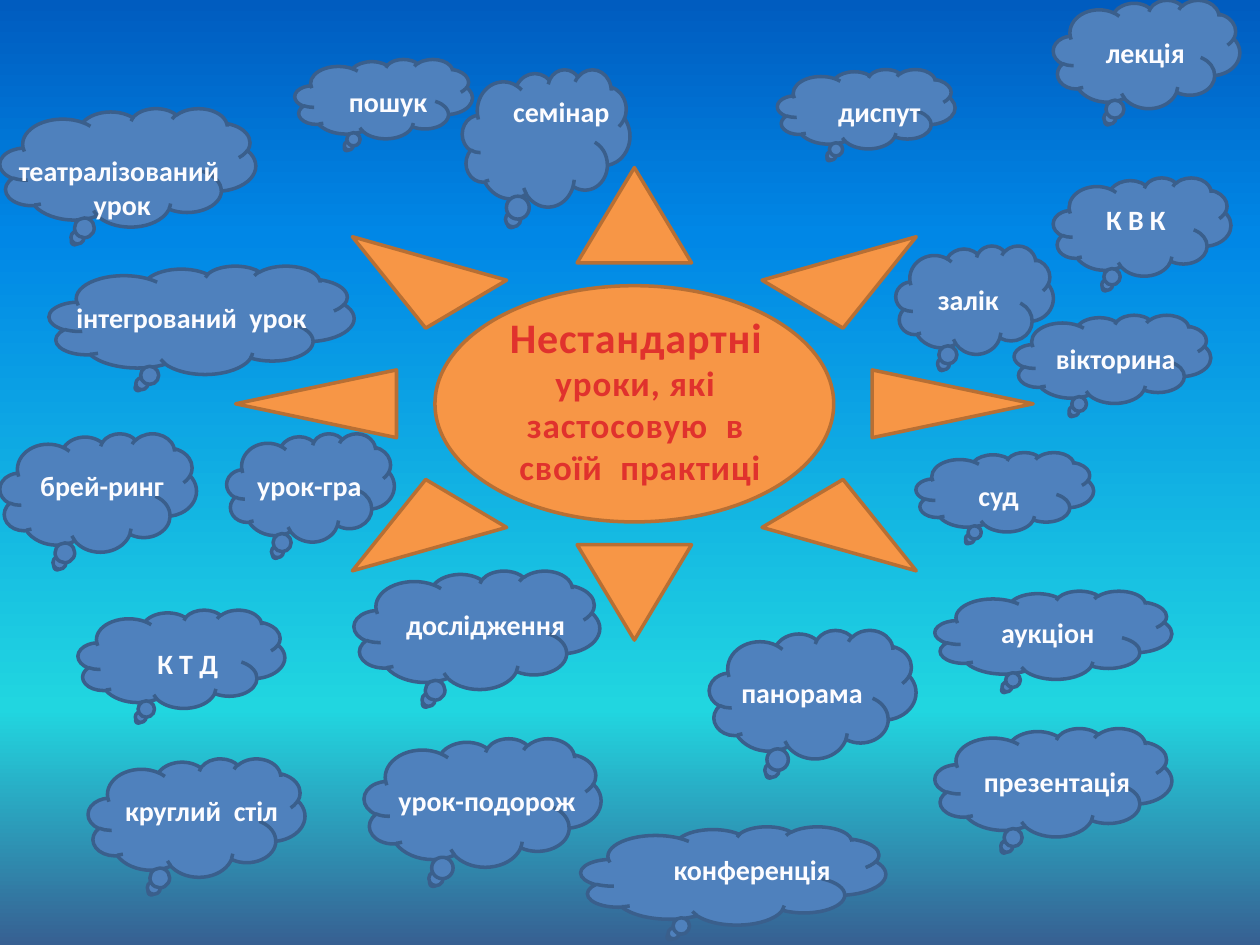
from lxml import etree
from pptx import Presentation
from pptx.dml.color import RGBColor
from pptx.enum.shapes import MSO_SHAPE
from pptx.enum.text import MSO_AUTO_SIZE, PP_ALIGN
from pptx.oxml.ns import qn
from pptx.util import Inches, Pt

SUN = MSO_SHAPE.SUN
CLOUD = MSO_SHAPE.CLOUD_CALLOUT
CENTER = PP_ALIGN.CENTER
GROW = MSO_AUTO_SIZE.SHAPE_TO_FIT_TEXT

COLORS = {
    "sun": "F79646", "sun_edge": "B76F34",
    "cloud": "4F81BD", "cloud_edge": "3A5F8C",
    "label": "FCFCFF", "label_edge": "1E7CEE",
    "title_light": "E0322D", "title_dark": "A2201C",
    "horizon": "376092", "turquoise": "21D6E0",
    "sky": "0087E6", "zenith": "005CBF",
}

TITLE = [
    ("Нестандартні", 24),
    ("  ", 16),
    ("уроки, які  застосовую  в  своїй  практиці", 20),
]

LESSONS = [
    ("лекція", (8.36, 0, 1.48, 0.86), (8.62, 0.23, 0.94, 0.37)),
    ("панорама", (5.63, 5, 1.64, 1.02), (5.72, 5.31, 1.29, 0.37)),
    ("диспут", (6.17, 0.55, 1.41, 0.63), (6.5, 0.7, 0.96, 0.37)),
    ("пошук", (2.34, 0.47, 1.41, 0.63), (2.62, 0.62, 0.92, 0.37)),
    ("вікторина", (8.05, 2.5, 1.56, 0.7), (8.19, 2.66, 1.33, 0.37)),
    ("суд", (7.27, 3.59, 1.41, 0.63), (7.65, 3.75, 0.55, 0.37)),
    ("залік", (7.11, 1.95, 1.25, 0.86), (7.3, 2.19, 0.77, 0.37)),
    ("дослідження", (2.81, 4.53, 1.95, 0.94), (3.04, 4.77, 1.63, 0.37)),
    ("урок-гра", (1.8, 3.44, 1.33, 0.86), (1.87, 3.67, 1.17, 0.37)),
    ("інтегрований  урок", (0.39, 2.11, 2.42, 0.86), (0.34, 2.34, 2.36, 0.37)),
    ("театралізований  урок", (0, 0.86, 2.03, 0.94), (-0.06, 1.17, 2.06, 0.64)),
    ("К Т Д ", (0.62, 4.84, 1.64, 0.78), (1.11, 5.08, 0.81, 0.37)),
    ("аукціон", (7.42, 4.69, 1.88, 0.7), (7.78, 4.84, 1.07, 0.37)),
    ("урок-подорож", (2.89, 5.86, 1.88, 1.02), (2.97, 6.17, 1.79, 0.37)),
    ("презентація", (7.42, 5.78, 1.88, 0.86), (7.61, 6.02, 1.56, 0.37)),
    ("круглий  стіл", (0.7, 6.02, 1.72, 0.94), (0.78, 6.25, 1.64, 0.37)),
    ("конференція", (4.61, 6.56, 2.42, 0.78), (5.14, 6.72, 1.66, 0.37)),
    ("брей-ринг", (0, 3.44, 1.56, 0.94), (0.13, 3.67, 1.36, 0.37)),
    ("К В К", (8.36, 1.41, 1.41, 0.78), (8.62, 1.56, 0.79, 0.37)),
    ("семінар", (3.67, 0.55, 1.33, 1.09), (3.83, 0.7, 1.25, 0.37)),
]
WRAPPED = {"семінар", "театралізований  урок"}


def add_solid(parent, color):
    fill = etree.SubElement(parent, qn("a:solidFill"))
    return etree.SubElement(fill, qn("a:srgbClr"), val=COLORS[color])


class LessonSlide:
    font = "Calibri"
    label_size = 16

    def __init__(self, slide):
        self.slide = slide

    def gradient(self, fill, owner, stops, angle):
        fill.gradient()
        fill.gradient_angle = angle
        stop_list = next(owner.iter(qn("a:gsLst")))
        for stop in list(stop_list):
            stop_list.remove(stop)
        for position, color in stops:
            stop = etree.SubElement(stop_list, qn("a:gs"), pos=str(position * 1000))
            etree.SubElement(stop, qn("a:srgbClr"), val=COLORS[color])

    def background(self, stops):
        self.gradient(self.slide.background.fill, self.slide.element, stops, 90)

    def shape(self, kind, box, color):
        shape = self.slide.shapes.add_shape(kind, *map(Inches, box))
        shape.shadow.inherit = False
        shape.fill.solid()
        shape.fill.fore_color.rgb = RGBColor.from_string(COLORS[color])
        shape.line.color.rgb = RGBColor.from_string(COLORS[color + "_edge"])
        shape.line.width = Pt(2)

    def text_box(self, box, wrap):
        frame = self.slide.shapes.add_textbox(*map(Inches, box)).text_frame
        frame.word_wrap = wrap
        frame.auto_size = GROW
        frame.paragraphs[0].alignment = CENTER
        return frame.paragraphs[0]

    def style(self, run, size):
        run.font.name = self.font
        run.font.size = Pt(size)
        run.font.bold = True

    def title(self, box, parts):
        paragraph = self.text_box(box, True)
        for words, size in parts:
            run = paragraph.add_run()
            run.text = words
            self.style(run, size)
            properties = run._r.get_or_add_rPr()
            properties.set("spc", "50")
            stops = [(25, "title_light"), (100, "title_dark")]
            self.gradient(run.font.fill, properties, stops, 270)

    def label(self, words, box, wrap):
        paragraph = self.text_box(box, wrap)
        paragraph.text = words
        run = paragraph.runs[0]
        self.style(run, self.label_size)
        run.font.color.rgb = RGBColor.from_string(COLORS["label"])
        outline = etree.Element(qn("a:ln"), w=str(Pt(0.07)))
        edge = add_solid(outline, "label_edge")
        etree.SubElement(edge, qn("a:alpha"), val="55000")
        run._r.get_or_add_rPr().insert(0, outline)


def main():
    presentation = Presentation()
    presentation.slide_width = Inches(10)
    presentation.slide_height = Inches(7.5)
    lessons = LessonSlide(presentation.slides.add_slide(presentation.slide_layouts[6]))

    lessons.background([(0, "horizon"), (25, "turquoise"), (75, "sky"), (100, "zenith")])
    lessons.shape(SUN, (1.87, 1.33, 6.33, 3.75), "sun")
    lessons.title((3.75, 2.42, 2.66, 1.51), TITLE)
    for _, cloud_box, _ in LESSONS:
        lessons.shape(CLOUD, cloud_box, "cloud")
    for words, _, label_box in LESSONS:
        lessons.label(words, label_box, words in WRAPPED)

    presentation.save("out.pptx")


if __name__ == "__main__":
    main()
